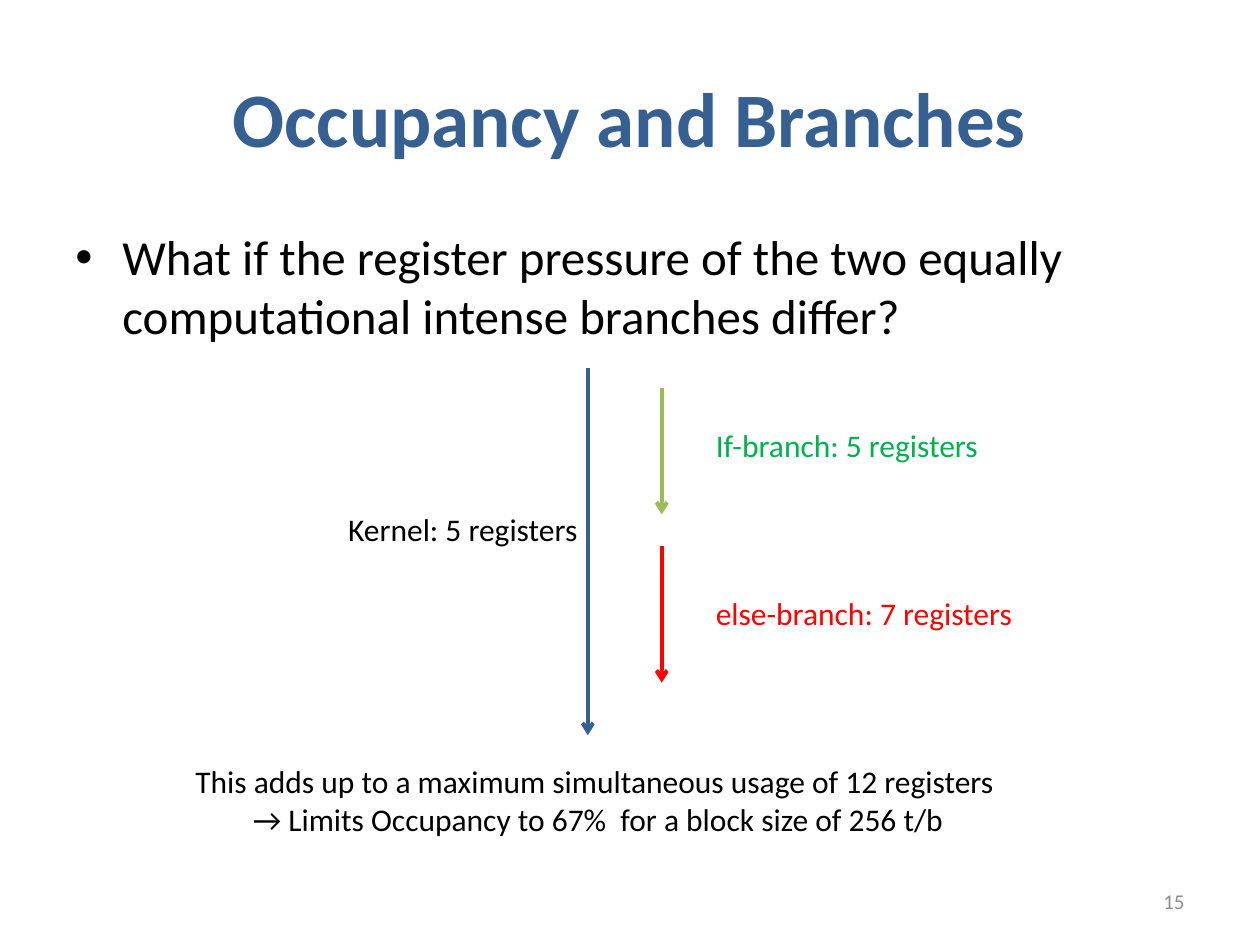
from lxml import etree
from pptx import Presentation
from pptx.dml.color import RGBColor
from pptx.enum.shapes import MSO_CONNECTOR
from pptx.enum.text import MSO_ANCHOR, PP_ALIGN
from pptx.oxml.ns import qn
from pptx.util import Cm, Pt

STRAIGHT = MSO_CONNECTOR.STRAIGHT
TOP, MIDDLE = MSO_ANCHOR.TOP, MSO_ANCHOR.MIDDLE
LEFT, CENTER, RIGHT = PP_ALIGN.LEFT, PP_ALIGN.CENTER, PP_ALIGN.RIGHT

COLORS = {
    "blue": "376092",
    "olive": "9BBB59",
    "green": "00B050",
    "red": "FF0000",
    "black": "000000",
    "gray": "8C8C8C",
}


def rgb(name):
    return RGBColor.from_string(COLORS[name])


class SlideBuilder:
    font = "Calibri"
    line_width = Pt(2.25)

    def __init__(self, slide):
        self.s = slide

    def text(self, box, lines, size=18, color="black", bold=False,
             align=LEFT, anchor=TOP):
        """Add one paragraph per line; box is left, top, width, height in cm."""
        sp = self.s.shapes.add_textbox(*map(Cm, box))
        tf = sp.text_frame
        tf.word_wrap = True
        tf.vertical_anchor = anchor
        style = {"name": self.font, "size": Pt(size), "bold": bold}
        for i, line in enumerate(lines):
            p = tf.add_paragraph() if i else tf.paragraphs[0]
            p.alignment = align
            r = p.add_run()
            r.text = line
            for key, value in style.items():
                setattr(r.font, key, value)
            r.font.color.rgb = rgb(color)
        return sp

    def bullet(self, box, line, size):
        sp = self.text(box, [line], size)
        p = sp.text_frame.paragraphs[0]
        p.space_before = Pt(size * 0.2)
        pPr = p._p.get_or_add_pPr()
        indent = Cm(0.95)
        pPr.set("marL", str(indent))
        pPr.set("indent", str(-indent))
        etree.SubElement(pPr, qn("a:buFont"), typeface="Arial")
        etree.SubElement(pPr, qn("a:buChar"), char="•")

    def down_arrow(self, x, top, bottom, color):
        c = self.s.shapes.add_connector(
            STRAIGHT, Cm(x), Cm(top), Cm(x), Cm(bottom))
        c.line.width = self.line_width
        c.line.color.rgb = rgb(color)
        etree.SubElement(c.line._get_or_add_ln(), qn("a:tailEnd"), type="arrow")
        etree.SubElement(c._element.spPr, qn("a:effectLst"))


def main():
    prs = Presentation()
    prs.slide_width, prs.slide_height = Cm(25.4), Cm(19.05)
    b = SlideBuilder(prs.slides.add_slide(prs.slide_layouts[6]))

    b.text((1.27, 0.76, 22.86, 3.18), ["Occupancy and Branches"], 44, "blue",
           bold=True, align=CENTER, anchor=MIDDLE)
    b.bullet((1.27, 4.45, 22.86, 12.57),
             "What if the register pressure of the two equally "
             "computational intense branches differ?", 28)

    branch_x, label_x = 13.34, 14.18
    b.down_arrow(11.85, 7.41, 14.82, "blue")
    b.down_arrow(branch_x, 7.83, 10.37, "olive")
    b.down_arrow(branch_x, 11.01, 13.76, "red")

    b.text((6.77, 10.16, 5.5, 1.03), ["Kernel: 5 registers"])
    b.text((label_x, 8.47, 5.93, 1.03), ["If-branch: 5 registers"], color="green")
    b.text((label_x, 11.85, 6.77, 1.03), ["else-branch: 7 registers"], color="red")

    b.text((2.96, 15.24, 18.2, 1.8),
           ["This adds up to a maximum simultaneous usage of 12 registers ",
            "→ Limits Occupancy to 67%  for a block size of 256 t/b"],
           align=CENTER)
    b.text((18.2, 17.66, 5.93, 1.01), ["15"], 12, "gray",
           align=RIGHT, anchor=MIDDLE)

    prs.save("out.pptx")


if __name__ == "__main__":
    main()
